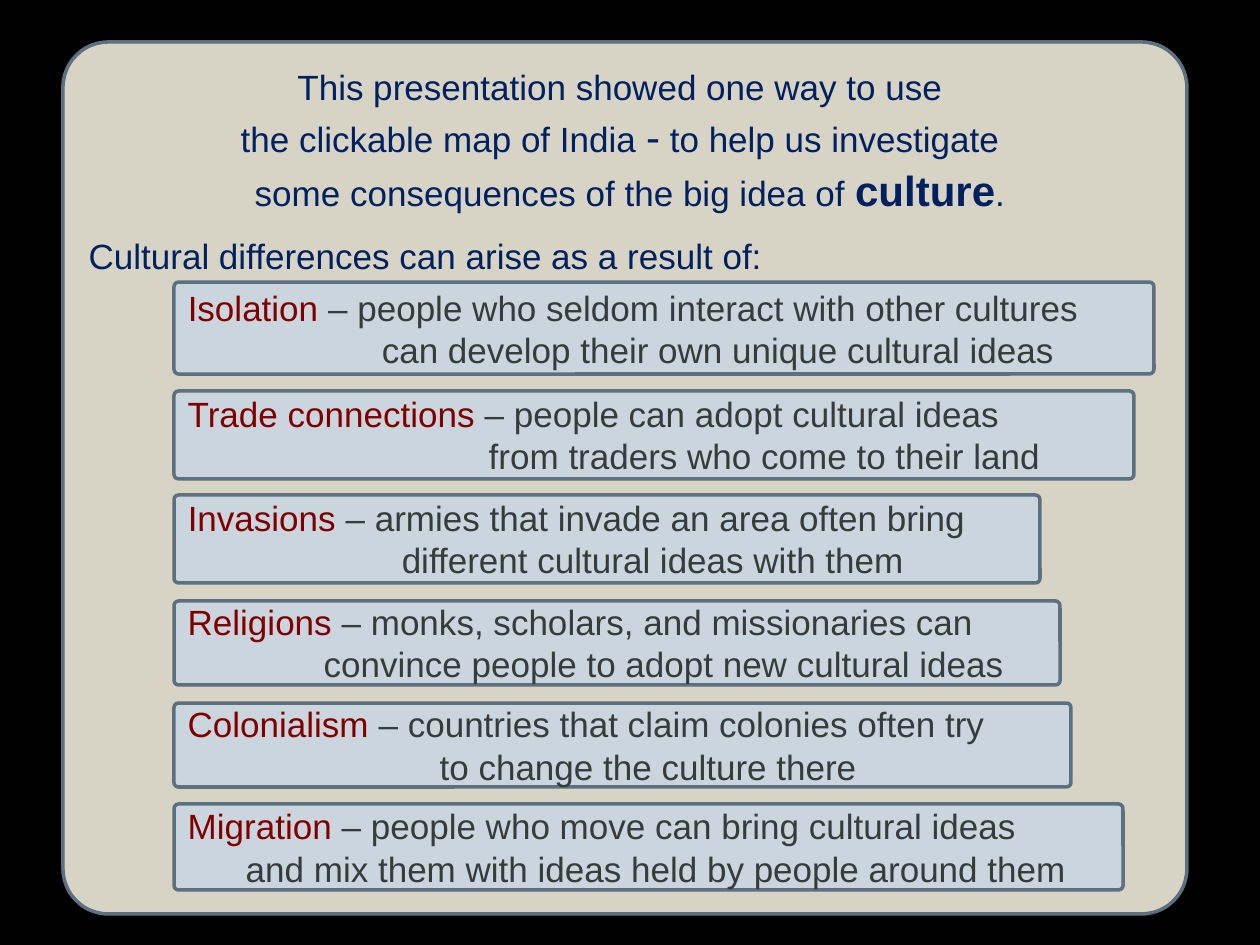
"""Build a closing slide on how cultural differences arise."""
from pptx import Presentation
from pptx.dml.color import RGBColor
from pptx.enum.shapes import MSO_SHAPE
from pptx.enum.text import MSO_ANCHOR, PP_ALIGN
from pptx.util import Emu, Pt

ROUNDED = MSO_SHAPE.ROUNDED_RECTANGLE
TOP, MIDDLE = MSO_ANCHOR.TOP, MSO_ANCHOR.MIDDLE
LEFT, CENTER = PP_ALIGN.LEFT, PP_ALIGN.CENTER

BLACK = RGBColor(0x00, 0x00, 0x00)
SAND = RGBColor(0xD8, 0xD4, 0xC5)
MIST = RGBColor(0xCB, 0xD5, 0xDE)
SLATE = RGBColor(0x5D, 0x70, 0x80)
NAVY = RGBColor(0x00, 0x20, 0x60)
MAROON = RGBColor(0x80, 0x00, 0x00)
CHARCOAL = RGBColor(0x34, 0x3C, 0x3D)

FONT = "Arial"
BODY_SIZE, ACCENT_SIZE = 20, 24
PX_PER_INCH = 126
CAUSE_LEFT = 174

INTRO = [
    (CENTER, 0, [("This presentation showed one way to use ", BODY_SIZE, False)]),
    (CENTER, 2, [("the clickable map of India ", BODY_SIZE, False),
                 ("-", ACCENT_SIZE, False),
                 (" to help us investigate ", BODY_SIZE, False)]),
    (CENTER, 2, [(" some consequences of the big idea of ", BODY_SIZE, False),
                 ("culture", ACCENT_SIZE, True),
                 (".", BODY_SIZE, False)]),
    (LEFT, 11, [("Cultural differences can arise as a result of:", BODY_SIZE, False)]),
]

CAUSES = [
    (282, 980, 92, "Isolation ", "– people who seldom interact with other cultures",
     194, "can develop their own unique cultural ideas"),
    (391, 960, 88, "Trade connections ", "– people can adopt cultural ideas",
     301, "from traders who come to their land"),
    (495, 866, 88, "Invasions ", "– armies that invade an area often bring",
     214, "different cultural ideas with them"),
    (601, 886, 84, "Religions ", "– monks, scholars, and missionaries can",
     136, "convince people to adopt new cultural ideas"),
    (703, 897, 84, "Colonialism ", "– countries that claim colonies often try",
     252, "to change the culture there"),
    (804, 949, 86, "Migration ", "– people who move can bring cultural ideas",
     58, "and mix them with ideas held by people around them"),
]


def px(length):
    """Turn whole pixels into EMU."""
    return Emu(round(length * 914400 / PX_PER_INCH))


class SlideBuilder:
    """Hold the shared style and the current slide."""

    def __init__(self, slide):
        self.slide = slide

    def background(self, color):
        """Fill the slide with one colour."""
        fill = self.slide.background.fill
        fill.solid()
        fill.fore_color.rgb = color

    def box(self, left, top, width, height, color, anchor):
        """Add an outlined rounded box and return its text frame."""
        box = self.slide.shapes.add_shape(
            ROUNDED, px(left), px(top), px(width), px(height))
        box.adjustments[0] = 0.052
        box.shadow.inherit = False
        box.fill.solid()
        box.fill.fore_color.rgb = color
        box.line.color.rgb = SLATE
        box.line.width = Pt(2)
        frame = box.text_frame
        frame.word_wrap = True
        frame.vertical_anchor = anchor
        return frame

    def para(self, frame, align=LEFT, before=0, indent=0):
        """Return the next paragraph, using the first one while it is empty."""
        first = frame.paragraphs[0]
        para = frame.add_paragraph() if first.runs else first
        para.alignment = align
        para.space_before = Pt(before)
        properties = para._p.get_or_add_pPr()
        properties.set("marL", str(px(indent)))
        properties.set("indent", "0")
        return para

    def span(self, para, text, color, size=BODY_SIZE, bold=False):
        """Add one run of text."""
        span = para.add_run()
        span.text = text
        span.font.name = FONT
        span.font.size = Pt(size)
        span.font.bold = bold
        span.font.color.rgb = color

    def panel(self):
        """Add the large panel with the introduction."""
        frame = self.box(63, 42, 1124, 872, SAND, TOP)
        frame.margin_top = px(10)
        for align, before, spans in INTRO:
            para = self.para(frame, align, before)
            for text, size, bold in spans:
                self.span(para, text, NAVY, size, bold)

    def cause(self, top, width, height, name, opening, indent, ending):
        """Add one cause with its indented second line."""
        frame = self.box(CAUSE_LEFT, top, width, height, MIST, MIDDLE)
        para = self.para(frame)
        self.span(para, name, MAROON)
        self.span(para, opening, CHARCOAL)
        self.span(self.para(frame, indent=indent), ending, CHARCOAL)


def main():
    """Build and save the deck."""
    deck = Presentation()
    deck.slide_width, deck.slide_height = px(1260), px(945)
    page = SlideBuilder(deck.slides.add_slide(deck.slide_layouts[6]))
    page.background(BLACK)
    page.panel()
    for cause in CAUSES:
        page.cause(*cause)
    deck.save("out.pptx")


if __name__ == "__main__":
    main()
